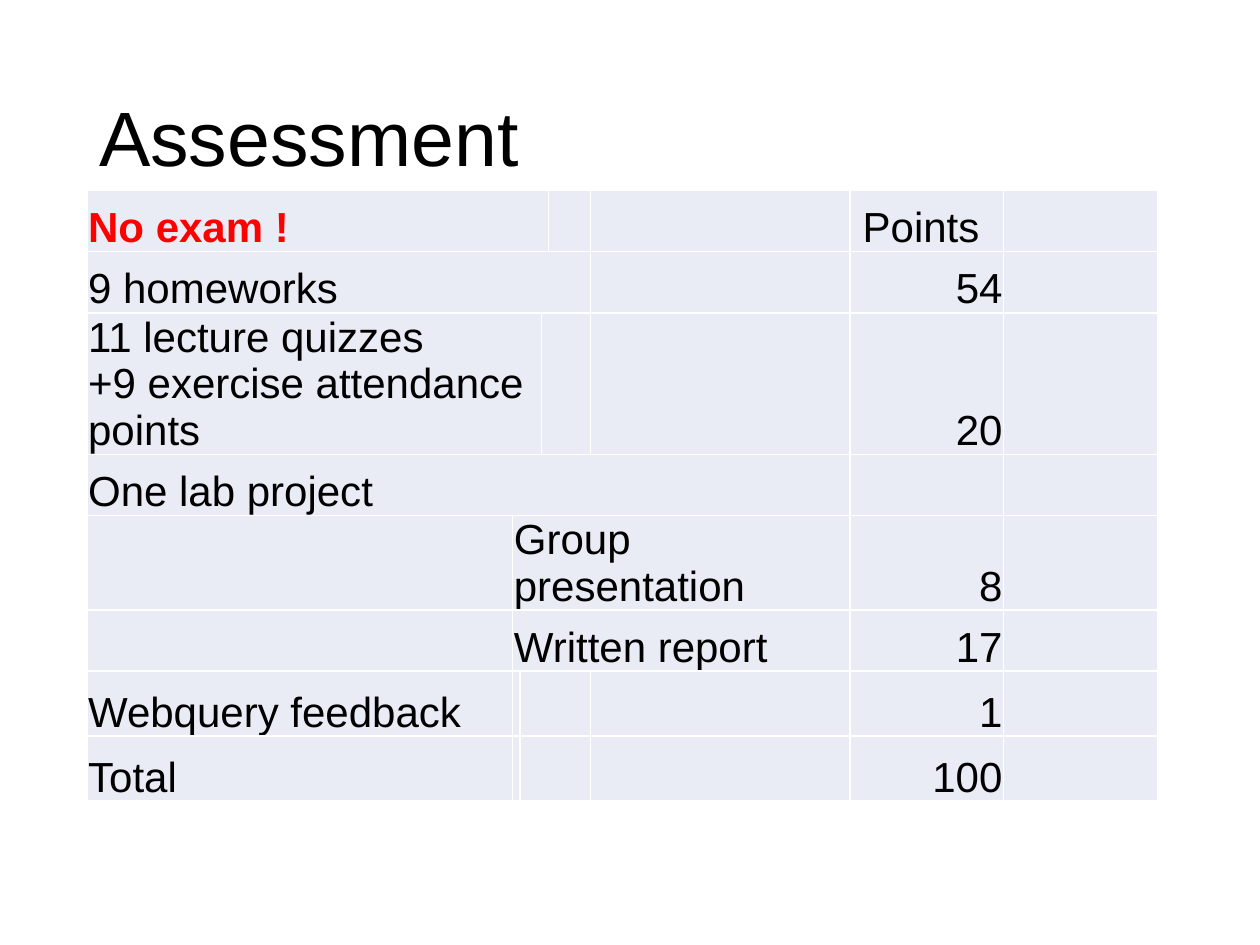
import pptx
import pptx.util
import pptx.dml.color
import pptx.enum.text
import pptx.oxml.ns
from lxml import etree

Pt = pptx.util.Pt
RGBColor = pptx.dml.color.RGBColor
ALIGN = pptx.enum.text.PP_ALIGN
ANCHOR = pptx.enum.text.MSO_ANCHOR
qn = pptx.oxml.ns.qn

BLACK = RGBColor(0, 0, 0)
RED = RGBColor(0xFF, 0, 0)
WHITE = RGBColor(0xFF, 0xFF, 0xFF)
CELL_FILL = RGBColor(0xE9, 0xEB, 0xF5)
FONT = "Arial"

# Content: each row lists (columns spanned, text)
TITLE = "Assessment"
NOTICE = "No exam !"
ROWS = [
    [(4, NOTICE), (1, ""), (1, ""), (1, "\N{NO-BREAK SPACE}Points"), (1, "")],
    [(5, "9 homeworks"), (1, ""), (1, "54"), (1, "")],
    [(3, "11 lecture quizzes\n+9 exercise attendance points"),
     (2, ""), (1, ""), (1, "20"), (1, "")],
    [(6, "One lab project"), (1, ""), (1, "")],
    [(1, ""), (5, "Group presentation"), (1, "8"), (1, "")],
    [(1, ""), (5, "Written report"), (1, "17"), (1, "")],
    [(1, "Webquery feedback"), (1, ""), (3, ""), (1, ""), (1, "1"), (1, "")],
    [(1, "Total"), (1, ""), (3, ""), (1, ""), (1, "100"), (1, "")],
]
COLUMN_WIDTHS = [243.3, 3.2, 12.2, 2.3, 23.8, 148.3, 87.9, 87.9]
ROW_HEIGHTS = [35, 35, 34.7, 34.7, 34.7, 34.7, 37.2, 37.2]
TABLE_LEFT, TABLE_TOP, TABLE_HEIGHT = 49.7, 108.8, 359.2


def add_borders(cell):
    """Draw a thin white line on every side of the cell."""
    properties = cell._tc.get_or_add_tcPr()
    for index, side in enumerate(("a:lnL", "a:lnR", "a:lnT", "a:lnB")):
        line = etree.Element(qn(side), w=str(int(Pt(1))))
        fill = etree.SubElement(line, qn("a:solidFill"))
        etree.SubElement(fill, qn("a:srgbClr"), val=str(WHITE))
        properties.insert(index, line)


def fill_cell(cell, text):
    cell.fill.solid()
    cell.fill.fore_color.rgb = CELL_FILL
    cell.vertical_anchor = ANCHOR.BOTTOM
    cell.margin_left = cell.margin_right = cell.margin_top = Pt(0.7)
    cell.margin_bottom = 0
    cell.text = text
    for paragraph in cell.text_frame.paragraphs:
        paragraph.alignment = ALIGN.RIGHT if text.isdigit() else ALIGN.LEFT
        paragraph.font.name = FONT
        paragraph.font.size = Pt(24)
        paragraph.font.bold = text == NOTICE
        paragraph.font.color.rgb = RED if text == NOTICE else BLACK


presentation = pptx.Presentation()
presentation.slide_width, presentation.slide_height = Pt(720), Pt(540)
slide = presentation.slides.add_slide(presentation.slide_layouts[5])

# Title
title = slide.shapes.title
title.left, title.top, title.width, title.height = Pt(49.5), Pt(28.8), Pt(621), Pt(104.4)
title.text_frame.text = TITLE
title.text_frame.vertical_anchor = ANCHOR.MIDDLE
paragraph = title.text_frame.paragraphs[0]
paragraph.alignment = ALIGN.LEFT
paragraph.line_spacing = 0.9
paragraph.font.name = FONT
paragraph.font.size = Pt(44)
paragraph.font.color.rgb = BLACK

# Points table
frame = slide.shapes.add_table(
    len(ROWS), len(COLUMN_WIDTHS), Pt(TABLE_LEFT), Pt(TABLE_TOP),
    Pt(sum(COLUMN_WIDTHS)), Pt(TABLE_HEIGHT))
table = frame.table
table.first_row = table.horz_banding = False
for column, width in zip(table.columns, COLUMN_WIDTHS):
    column.width = Pt(width)
for row, height in zip(table.rows, ROW_HEIGHTS):
    row.height = Pt(height)
frame.height = Pt(TABLE_HEIGHT)

for row_index, entries in enumerate(ROWS):
    column_index = 0
    for span, text in entries:
        cell = table.cell(row_index, column_index)
        if span > 1:
            cell.merge(table.cell(row_index, column_index + span - 1))
        fill_cell(cell, text)
        column_index += span
for cell in table.iter_cells():
    add_borders(cell)

presentation.save("out.pptx")
